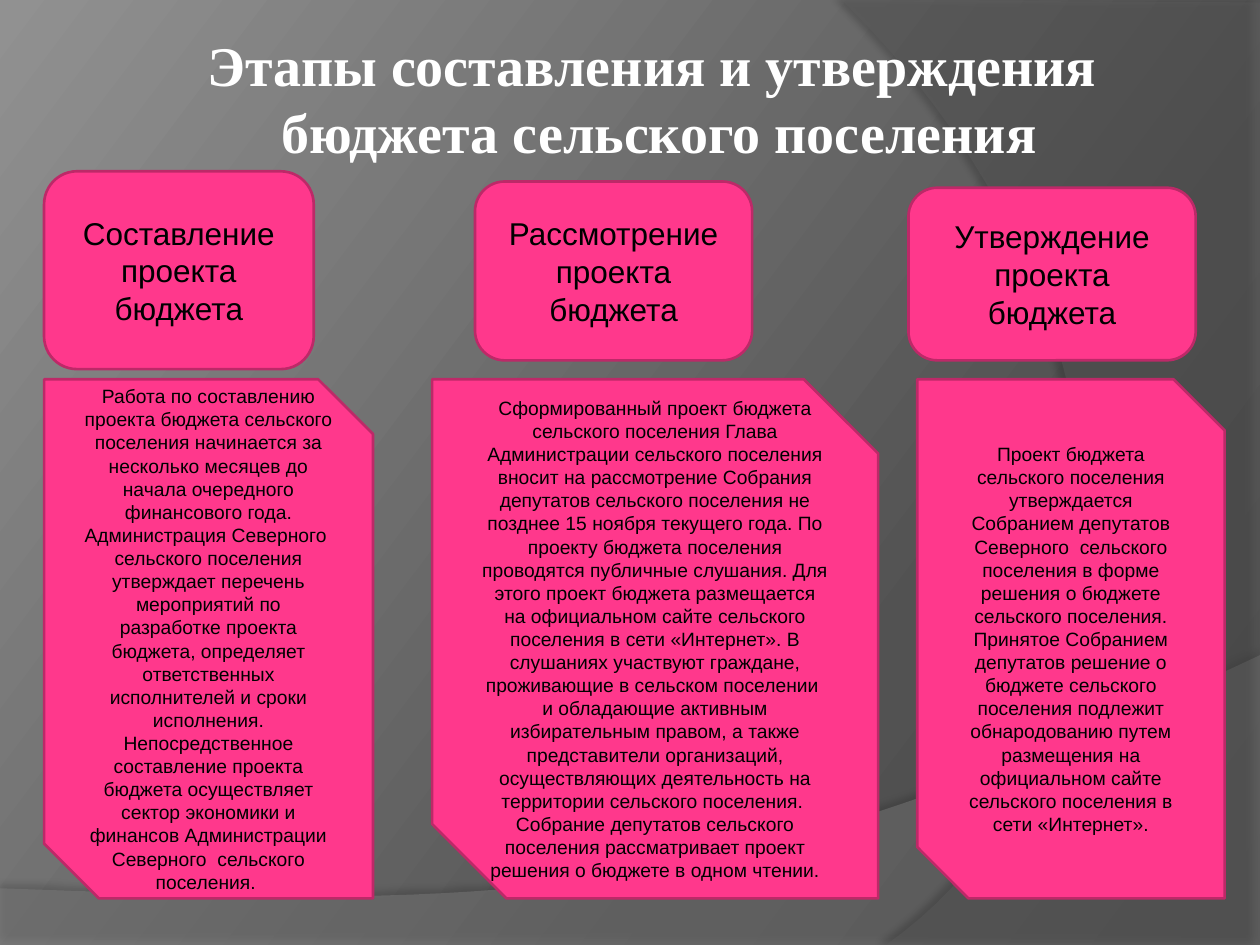
from copy import deepcopy

from lxml.etree import SubElement
from pptx import Presentation
from pptx.dml.color import RGBColor
from pptx.enum.shapes import MSO_SHAPE as Preset
from pptx.enum.text import MSO_ANCHOR as Anchor, MSO_AUTO_SIZE as AutoSize, PP_ALIGN as Align
from pptx.oxml.ns import qn
from pptx.util import Inches, Pt

COLORS = {
    "back_dark": "444444", "back_mid": "525252", "back_light": "919191",
    "wave": "7F7F7F", "arc": "5E5E5E", "shadow": "000000",
    "card": "FF388C", "border": "BD2968", "text": "000000", "title": "FFFFFF",
}
TITLE = "Этапы составления и утверждения \vбюджета сельского поселения"
# Each stage: heading, heading box, paragraphs, description box
STAGES = [
    ("Составление проекта бюджета", (0.35, 1.36, 2.14, 1.57),
     ["Работа по составлению проекта бюджета сельского поселения начинается за "
      "несколько месяцев до начала очередного финансового года. Администрация "
      "Северного  сельского поселения утверждает перечень мероприятий по разработке "
      "проекта бюджета, определяет ответственных исполнителей и сроки исполнения. "
      "Непосредственное составление проекта бюджета осуществляет сектор экономики и "
      "финансов Администрации Северного  сельского поселения. "],
     (0.35, 3.01, 2.61, 4.12)),
    ("Рассмотрение проекта бюджета", (3.77, 1.44, 2.2, 1.42),
     ["Сформированный проект бюджета сельского поселения Глава Администрации "
      "сельского поселения вносит на рассмотрение Собрания депутатов сельского "
      "поселения не позднее 15 ноября текущего года. По проекту бюджета поселения "
      "проводятся публичные слушания. Для этого проект бюджета размещается на "
      "официальном сайте сельского поселения в сети «Интернет». В слушаниях участвуют "
      "граждане, проживающие в сельском поселении  и обладающие активным "
      "избирательным правом, а также представители организаций, осуществляющих "
      "деятельность на территории сельского поселения. ",
      "Собрание депутатов сельского поселения рассматривает проект решения о бюджете "
      "в одном чтении."],
     (3.43, 3.01, 3.54, 4.12)),
    ("Утверждение проекта бюджета", (7.21, 1.49, 2.28, 1.37),
     ["Проект бюджета сельского поселения утверждается Собранием депутатов "
      "Северного  сельского поселения в форме решения о бюджете сельского поселения. "
      "Принятое Собранием депутатов решение о бюджете сельского поселения подлежит "
      "обнародованию путем размещения на официальном сайте сельского поселения в "
      "сети «Интернет»."],
     (7.28, 3.01, 2.44, 4.12)),
]


def color(name):
    return RGBColor.from_string(COLORS[name])


def curve(start, control_a, control_b, end, steps=40):
    """Points along a cubic Bezier curve."""
    points = []
    for step in range(steps + 1):
        t = step / steps
        weights = ((1 - t) ** 3, 3 * t * (1 - t) ** 2, 3 * t * t * (1 - t), t ** 3)
        points.append(tuple(
            sum(w * p[axis] for w, p in zip(weights, (start, control_a, control_b, end)))
            for axis in (0, 1)))
    return points


def paint_background(page):
    fill = page.background.fill
    fill.gradient()
    fill.gradient_angle = 360 - 217
    stops = fill.gradient_stops
    stop_list = page.background.fill._fill._gradFill.find(qn("a:gsLst"))
    stop_list.insert(1, deepcopy(stop_list[0]))
    stops = fill.gradient_stops
    for stop, name, position in zip(stops, ("back_dark", "back_mid", "back_light"), (0, 0.3, 1)):
        stop.color.rgb = color(name)
        stop.position = position


def add_swoosh(page, points, fill_name, opacity, shadow_opacity, distance, direction):
    builder = page.shapes.build_freeform(
        Inches(points[0][0]), Inches(points[0][1]), scale=1)
    builder.add_line_segments([(Inches(x), Inches(y)) for x, y in points[1:]], close=True)
    swoosh = builder.convert_to_shape()
    swoosh.fill.solid()
    swoosh.fill.fore_color.rgb = color(fill_name)
    swoosh.line.fill.background()
    swoosh.shadow.inherit = False
    properties = swoosh.element.spPr
    fill_color = properties.find(qn("a:solidFill")).find(qn("a:srgbClr"))
    SubElement(fill_color, qn("a:alpha"), val=str(opacity * 1000))
    shadow = SubElement(
        properties.find(qn("a:effectLst")), qn("a:outerShdw"),
        blurRad=str(Pt(4)), dist=str(Pt(distance)), dir=str(direction * 60000),
        algn="ctr", rotWithShape="0")
    shadow_color = SubElement(shadow, qn("a:srgbClr"), val=COLORS["shadow"])
    SubElement(shadow_color, qn("a:alpha"), val=str(shadow_opacity * 1000))


def add_backdrop(page):
    paint_background(page)
    wave = [(0, 7.05), (0, 7.5), (10, 7.5)]
    wave += curve((10, 5.2), (5.59, 7.29), (3.91, 7.19), (0, 7.05))[:-1]
    add_swoosh(page, wave, "wave", 45, 35, 3.5, 270)
    arc = [(10, 0.02), (10, 7.5)]
    arc += curve((7.03, 7.5), (8.91, 6.19), (9.47, 2.75), (6.68, 0))
    add_swoosh(page, arc, "arc", 40, 45, 4, 180)


def format_text(frame, size, font_name, color_name, bold=False):
    frame.vertical_anchor = Anchor.MIDDLE
    frame.word_wrap = True
    for para in frame.paragraphs:
        para.alignment = Align.CENTER
        para.font.size = Pt(size)
        para.font.name = font_name
        para.font.bold = bold
        para.font.color.rgb = color(color_name)


def place_title(page, box):
    title = page.shapes.title
    title.left, title.top, title.width, title.height = map(Inches, box)
    frame = title.text_frame
    frame.text = TITLE
    frame.auto_size = AutoSize.NONE
    frame.margin_bottom = Inches(0.34)
    format_text(frame, 32, "Times New Roman", "title", bold=True)
    # Bring the title in front of the backdrop
    title.element.getparent().append(title.element)


def add_card(page, preset, box, paragraphs, size):
    card = page.shapes.add_shape(preset, *map(Inches, box))
    card.shadow.inherit = False
    card.fill.solid()
    card.fill.fore_color.rgb = color("card")
    card.line.color.rgb = color("border")
    card.line.width = Pt(1.5)
    card.text_frame.text = "\n".join(paragraphs)
    format_text(card.text_frame, size, "Arial", "text")


def main():
    deck = Presentation()
    deck.slide_width, deck.slide_height = Inches(10), Inches(7.5)
    page = deck.slides.add_slide(deck.slide_layouts[5])
    add_backdrop(page)
    place_title(page, (0.83, 0.29, 8.81, 1.26))
    # Headings above, descriptions below
    for heading, heading_box, paragraphs, description_box in STAGES:
        add_card(page, Preset.ROUNDED_RECTANGLE, heading_box, [heading], 18)
        add_card(page, Preset.SNIP_2_DIAG_RECTANGLE, description_box, paragraphs, 11)
    deck.save("out.pptx")


if __name__ == "__main__":
    main()
